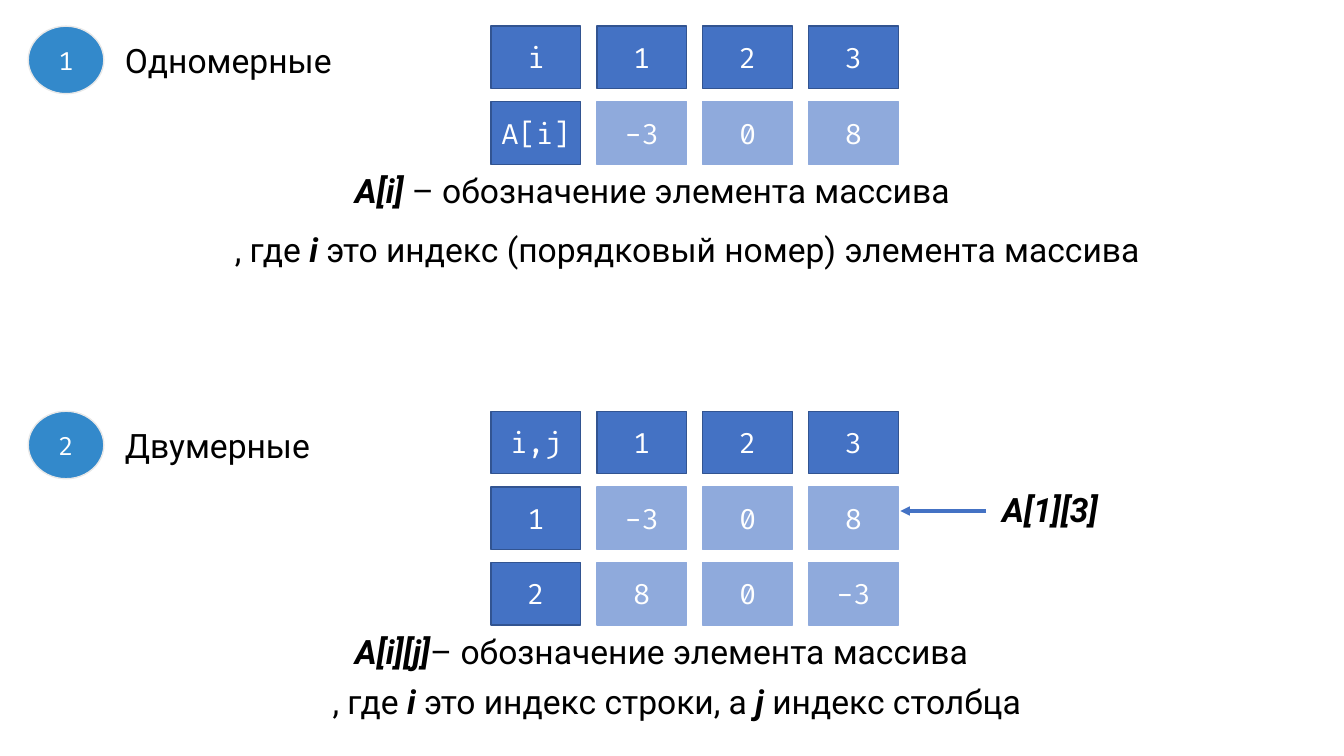
from lxml.etree import SubElement
from pptx import Presentation
from pptx.dml.color import RGBColor
from pptx.enum.shapes import MSO_CONNECTOR, MSO_SHAPE
from pptx.enum.text import MSO_ANCHOR, PP_ALIGN
from pptx.oxml.ns import qn
from pptx.util import Inches, Pt

BLUE = RGBColor(0x44, 0x72, 0xC4)
DARK_BLUE = RGBColor(0x32, 0x54, 0x91)
LIGHT_BLUE = RGBColor(0x8F, 0xAA, 0xDC)
BADGE_BLUE = RGBColor(0x33, 0x89, 0xCB)
PALE_GRAY = RGBColor(0xE8, 0xE8, 0xE8)
WHITE = RGBColor(0xFF, 0xFF, 0xFF)
BLACK = RGBColor(0, 0, 0)


class ArraySlide:
    code_font = "Fira Code"
    prose_font = "Roboto"
    grid_left = 4.87
    column_step = 1.05
    row_step = 0.75

    def __init__(self, presentation):
        blank_layout = presentation.slide_layouts[6]
        self.shapes = presentation.slides.add_slide(blank_layout).shapes

    def label(self, kind, left, top, width, height, text, size, fill, border):
        """Draw a filled shape with one centred white label."""
        shape = self.shapes.add_shape(
            kind, Inches(left), Inches(top), Inches(width), Inches(height))
        shape.shadow.inherit = False
        shape.fill.solid()
        shape.fill.fore_color.rgb = fill
        shape.line.color.rgb = border
        shape.line.width = Pt(1)
        frame = shape.text_frame
        frame.text = text
        frame.vertical_anchor = MSO_ANCHOR.MIDDLE
        paragraph = frame.paragraphs[0]
        paragraph.alignment = PP_ALIGN.CENTER
        font = paragraph.runs[0].font
        font.name, font.size = self.code_font, Pt(size)
        font.color.rgb = WHITE

    def badge(self, top, number):
        self.label(MSO_SHAPE.OVAL, 0.28, top, 0.75, 0.67, number, 18,
                   BADGE_BLUE, PALE_GRAY)

    def grid(self, top, rows):
        """Draw an array whose first row and column hold the indices."""
        for r, row in enumerate(rows):
            for c, value in enumerate(row):
                is_index = r == 0 or c == 0
                self.label(
                    MSO_SHAPE.RECTANGLE,
                    self.grid_left + c * self.column_step,
                    top + r * self.row_step,
                    0.89, 0.62, value, 20,
                    BLUE if is_index else LIGHT_BLUE,
                    DARK_BLUE if is_index else LIGHT_BLUE)

    def prose(self, left, top, width, marked_text):
        """Write one line; parts between asterisks are bold italic."""
        box = self.shapes.add_textbox(
            Inches(left), Inches(top), Inches(width), Inches(0.5))
        box.text_frame.word_wrap = True
        paragraph = box.text_frame.paragraphs[0]
        paragraph.alignment = PP_ALIGN.JUSTIFY
        paragraph._p.get_or_add_pPr().set("indent", str(Inches(0.49)))
        for position, part in enumerate(marked_text.split("*")):
            if not part:
                continue
            run = paragraph.add_run()
            run.text = part
            font = run.font
            font.name, font.size = self.prose_font, Pt(24)
            font.color.rgb = BLACK
            font.bold = font.italic = position % 2 == 1

    def arrow(self, start_x, end_x, y):
        connector = self.shapes.add_connector(
            MSO_CONNECTOR.STRAIGHT,
            Inches(start_x), Inches(y), Inches(end_x), Inches(y))
        connector.line.color.rgb = BLUE
        connector.line.width = Pt(2.25)
        line = connector.line._get_or_add_ln()
        SubElement(line, qn("a:tailEnd"), type="triangle")
        SubElement(connector._element.spPr, qn("a:effectLst"))


def main():
    presentation = Presentation()
    presentation.slide_width = Inches(13.33)
    presentation.slide_height = Inches(7.5)
    slide = ArraySlide(presentation)

    slide.badge(0.26, "1")
    slide.prose(0.65, 0.35, 2.94, "Одномерные")
    slide.grid(0.26, [("i", "1", "2", "3"),
                      ("A[i]", "-3", "0", "8")])
    slide.prose(2.93, 1.64, 7.48, "*A[i] *– обозначение элемента массива")
    slide.prose(1.74, 2.22, 9.85,
                ", где *i *это индекс (порядковый номер) элемента массива")

    slide.badge(4.08, "2")
    slide.prose(0.65, 4.17, 3.17, "Двумерные")
    slide.grid(4.08, [("i,j", "1", "2", "3"),
                      ("1", "-3", "0", "8"),
                      ("2", "8", "0", "-3")])
    slide.arrow(9.78, 8.93, 5.07)
    slide.prose(9.35, 4.8, 2.94, "*A[1][3]*")
    slide.prose(2.93, 6.21, 7.48, "*A[i][j]*– обозначение элемента массива")
    slide.prose(2.71, 6.71, 7.92,
                ", где *i *это индекс cтроки, а *j *индекс столбца")

    presentation.save("out.pptx")


if __name__ == "__main__":
    main()
